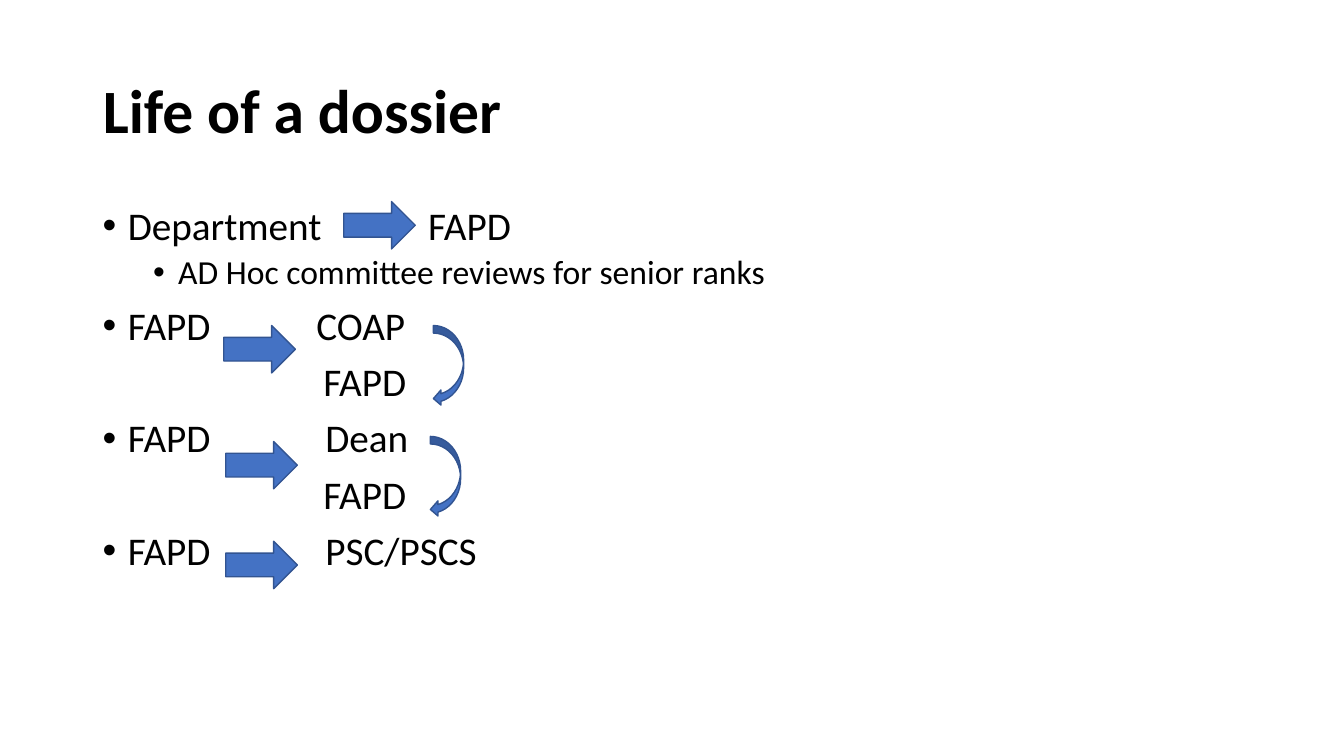
from lxml import etree
from pptx import Presentation
from pptx.dml.color import RGBColor
from pptx.enum.shapes import MSO_SHAPE
from pptx.enum.text import MSO_ANCHOR, MSO_AUTO_SIZE, PP_ALIGN
from pptx.oxml.ns import qn
from pptx.util import Emu, Inches, Pt

RIGHT_ARROW = MSO_SHAPE.RIGHT_ARROW
CURVED_ARROW = MSO_SHAPE.CURVED_LEFT_ARROW
FONT = "Calibri"
BLACK, BLUE, DARK_BLUE = "000000", "4472C4", "325491"
TITLE_ONLY = 5

TITLE_BOX = (0.92, 0.4, 11.5, 1.45)
BODY_BOX = (0.92, 2, 11.5, 4.76)
INSET = 0.1
HANGING = 0.25

# Sender or plain line, receiver, level, offset of the receiver from the text edge
STEPS = [
    ("Department", "FAPD", 0, 3.23),
    ("AD Hoc committee reviews for senior ranks", None, 1, None),
    ("FAPD", "COAP", 0, 2.12),
    (None, "FAPD", 0, 2.19),
    ("FAPD", "Dean", 0, 2.21),
    (None, "FAPD", 0, 2.19),
    ("FAPD", "PSC/PSCS", 0, 2.21),
]
# Offsets of the arrows from the body's corner
HANDOVERS = [(2.49, 0), (1.3, 1.23), (1.32, 2.38), (1.32, 3.37)]
RETURNS = [(3.38, 1.23), (3.35, 2.33)]
HANDOVER_SIZE = (0.71, 0.47)
RETURN_SIZE = (0.3, 0.8)


def color(hex_string):
    return RGBColor.from_string(hex_string)


def style_font(paragraph, size, bold=False):
    font = paragraph.font
    font.name, font.size, font.bold = FONT, Pt(size), bold
    font.color.rgb = color(BLACK)


def add_title(slide, box, wording):
    title = slide.shapes.title
    title.left, title.top, title.width, title.height = map(Inches, box)
    frame = title.text_frame
    frame.text = wording
    frame.vertical_anchor = MSO_ANCHOR.MIDDLE
    frame.auto_size = MSO_AUTO_SIZE.NONE
    heading = frame.paragraphs[0]
    heading.alignment = PP_ALIGN.LEFT
    heading.line_spacing = 0.9
    style_font(heading, 44, bold=True)


def set_bullet(paragraph, level, receiver_offset):
    """Hang the line on a bullet, with a tab stop for its receiver if it has one."""
    properties = paragraph._p.get_or_add_pPr()
    properties.set("marL", str(Inches(HANGING + 0.5 * level)))
    properties.set("indent", str(Inches(-HANGING)))
    etree.SubElement(properties, qn("a:buFont"), typeface="Arial")
    etree.SubElement(properties, qn("a:buChar"), char="•")
    if receiver_offset:
        stops = etree.SubElement(properties, qn("a:tabLst"))
        etree.SubElement(stops, qn("a:tab"), pos=str(Inches(receiver_offset)), algn="l")


def set_plain_indent(paragraph, offset):
    properties = paragraph._p.get_or_add_pPr()
    properties.set("marL", str(Inches(offset)))
    properties.set("indent", "0")
    etree.SubElement(properties, qn("a:buNone"))


def add_steps(slide, box):
    frame = slide.shapes.add_textbox(*map(Inches, box)).text_frame
    frame.word_wrap = True
    frame.margin_left = frame.margin_right = Inches(INSET)
    for index, (sender, receiver, level, offset) in enumerate(STEPS):
        step = frame.paragraphs[0] if index == 0 else frame.add_paragraph()
        step.text = "\t".join(filter(None, (sender, receiver)))
        step.level = level
        step.line_spacing = 0.9
        step.space_before = Pt(5 if level else 10)
        if sender:
            set_bullet(step, level, offset)
        else:
            set_plain_indent(step, offset)
        style_font(step, 24 if level else 28)


def add_arrows(slide, box, preset, offsets, size):
    for across, down in offsets:
        place = (box[0] + across, box[1] + down, *size)
        arrow = slide.shapes.add_shape(preset, *map(Inches, place))
        arrow.shadow.inherit = False
        arrow.fill.solid()
        arrow.fill.fore_color.rgb = color(BLUE)
        arrow.line.color.rgb = color(DARK_BLUE)
        arrow.line.width = Pt(1)


def main():
    deck = Presentation()
    deck.slide_width, deck.slide_height = Emu(12192000), Inches(7.5)
    slide = deck.slides.add_slide(deck.slide_layouts[TITLE_ONLY])
    add_title(slide, TITLE_BOX, "Life of a dossier")
    add_steps(slide, BODY_BOX)
    add_arrows(slide, BODY_BOX, RIGHT_ARROW, HANDOVERS, HANDOVER_SIZE)
    add_arrows(slide, BODY_BOX, CURVED_ARROW, RETURNS, RETURN_SIZE)
    deck.save("out.pptx")


if __name__ == "__main__":
    main()
